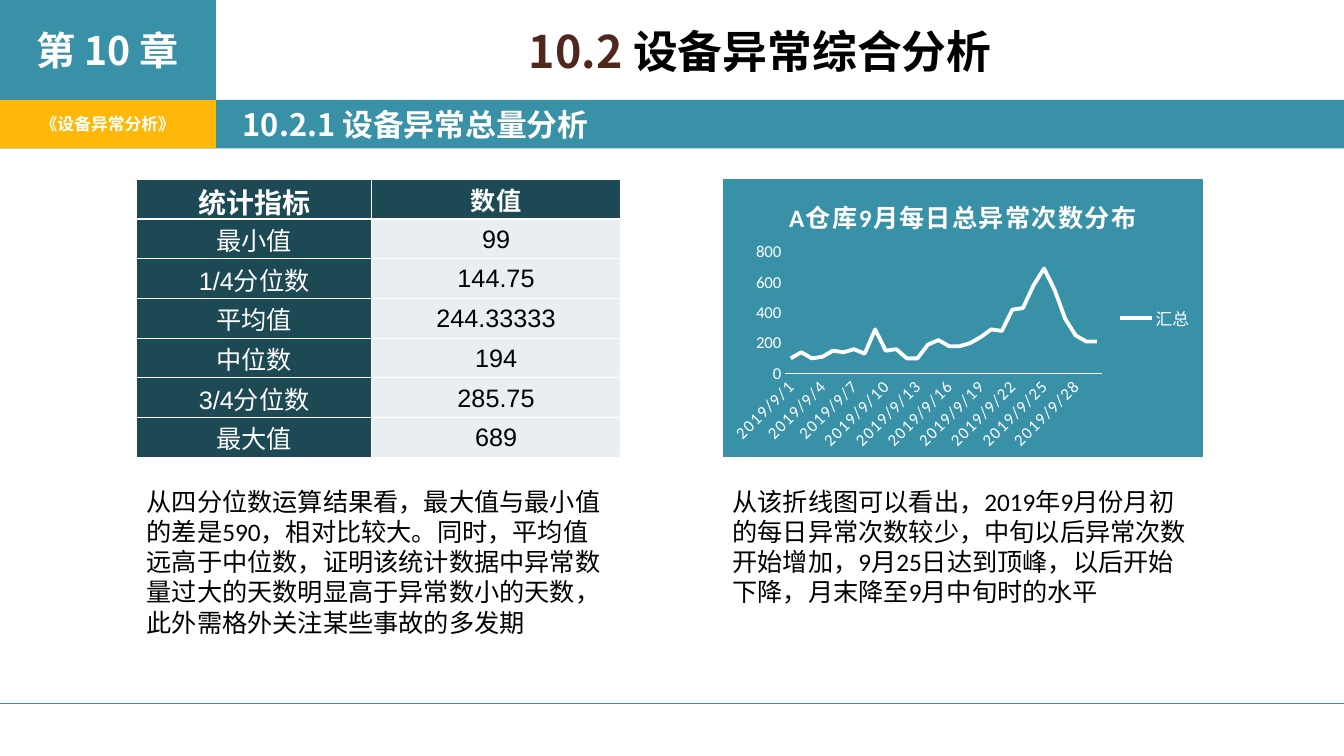
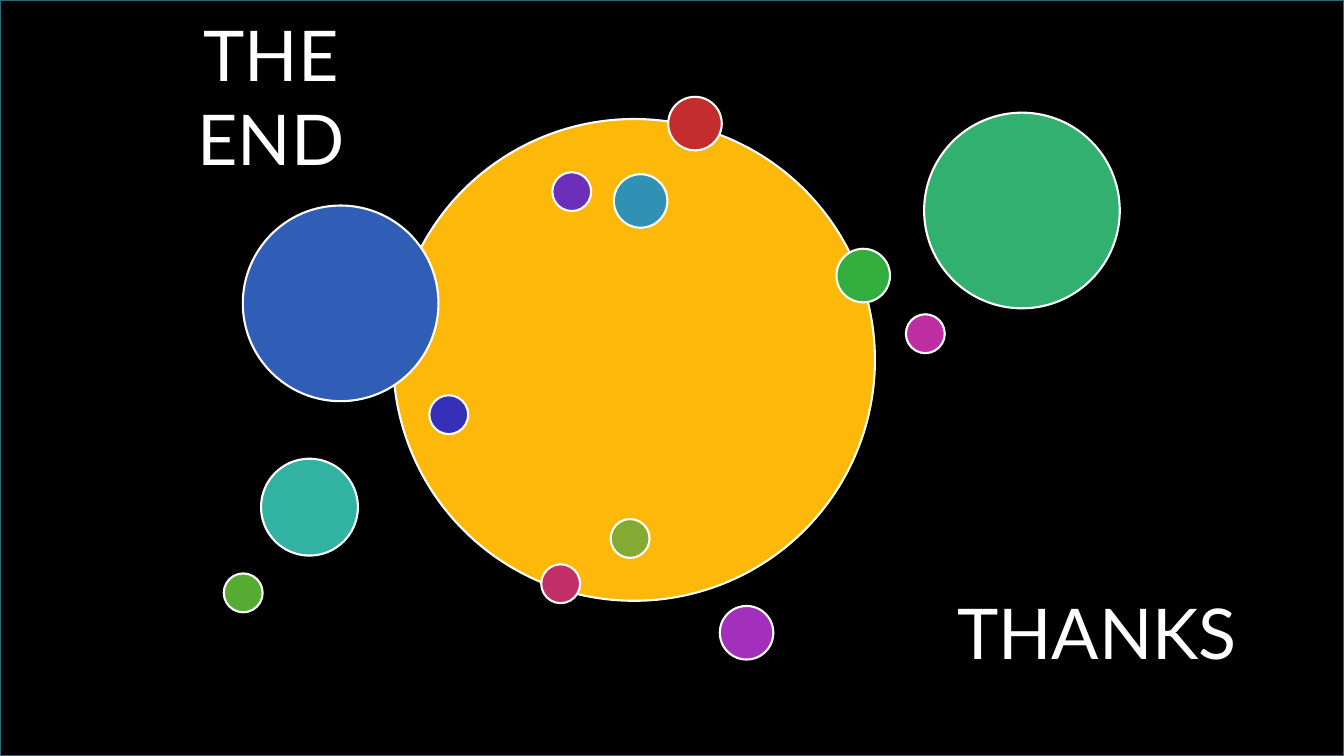
"""Build the equipment anomaly analysis slide and the closing slide."""

from dataclasses import dataclass
from typing import Optional

from lxml.etree import SubElement
from pptx import Presentation
from pptx.chart.data import CategoryChartData
from pptx.dml.color import RGBColor
from pptx.enum.chart import XL_CHART_TYPE as ChartType
from pptx.enum.chart import XL_LEGEND_POSITION as LegendPosition
from pptx.enum.chart import XL_TICK_MARK as TickMark
from pptx.enum.shapes import MSO_CONNECTOR as Connector
from pptx.enum.shapes import MSO_SHAPE as ShapeKind
from pptx.enum.text import MSO_ANCHOR as Anchor
from pptx.enum.text import PP_ALIGN as Align
from pptx.oxml import parse_xml
from pptx.oxml.ns import nsdecls, qn
from pptx.util import Cm, Pt

COLORS = {
    "teal": "3891A7",
    "amber": "FEB80A",
    "brown": "4F271C",
    "navy": "1C4954",
    "pale": "E8EEF1",
    "edge": "296B7C",
    "white": "FFFFFF",
    "black": "000000",
    "red": "C32D2E",
    "rose": "C12E68",
    "magenta": "BF2EA0",
    "purple": "A42FBD",
    "violet": "6C2FBA",
    "indigo": "3630B8",
    "blue": "305EB6",
    "cyan": "3191B4",
    "turquoise": "31B2A2",
    "emerald": "32B06F",
    "green": "32AE3E",
    "leaf": "56AC33",
    "olive": "84AA33",
}
CJK_FONT = "Noto Sans CJK SC"
WIDTH, HEIGHT = 33.87, 19.05
SIDE_WIDTH, HEAD_HEIGHT, BAND_HEIGHT = 5.44, 2.52, 1.22
LEFT_COLUMN, RIGHT_COLUMN, CONTENT_TOP, NOTE_TOP = 3.45, 18.21, 4.52, 12.12
COLUMN_WIDTH, ROW_HEIGHT = 12.19, 1.0


@dataclass(frozen=True)
class Box:
    left: float
    top: float
    width: float
    height: float

    def lengths(self) -> tuple:
        return Cm(self.left), Cm(self.top), Cm(self.width), Cm(self.height)


@dataclass(frozen=True)
class Style:
    size: float
    font: str
    color: str = "black"
    bold: bool = False
    align: Optional[Align] = None
    spacing: int = 0


@dataclass(frozen=True)
class Circle:
    left: float
    top: float
    diameter: float
    color: str


@dataclass(frozen=True)
class Note:
    left: float
    height: float
    text: str


CHAPTER = Style(28, CJK_FONT, "white", True, Align.CENTER)
BOOK = Style(12, CJK_FONT, "white", True, Align.CENTER)
TITLE = Style(32, CJK_FONT, "black", True, Align.CENTER)
SECTION = Style(22, CJK_FONT, "white", True, Align.LEFT)
BODY = Style(18, "Calibri")
CHART_TITLE = Style(18, "Calibri", "white", True, spacing=100)
CLOSING = Style(50, "Lato", "white")

STATISTICS = [
    ("统计指标", "数值"),
    ("最小值", "99"),
    ("1/4分位数", "144.75"),
    ("平均值", "244.33333"),
    ("中位数", "194"),
    ("3/4分位数", "285.75"),
    ("最大值", "689"),
]
DAILY_TOTALS = [
    100, 140, 100, 110, 150, 140, 160, 130, 290, 150,
    160, 100, 100, 190, 220, 180, 180, 200, 240, 290,
    280, 420, 430, 580, 690, 550, 360, 250, 210, 210,
]
NOTES = [
    Note(LEFT_COLUMN, 4.11, "从四分位数运算结果看，最大值与最小值的差是590，相对比较大。同时，平均值远高于中位数，"
         "证明该统计数据中异常数量过大的天数明显高于异常数小的天数，此外需格外关注某些事故的多发期"),
    Note(RIGHT_COLUMN, 3.33, "从该折线图可以看出，2019年9月份月初的每日异常次数较少，中旬以后异常次数开始增加，"
         "9月25日达到顶峰，以后开始下降，月末降至9月中旬时的水平"),
]
TINY, SMALL, MEDIUM, LARGE, HUGE = 0.98, 1.35, 2.44, 4.93, 12.14
CIRCLES = [
    Circle(9.91, 3.0, HUGE, "amber"),
    Circle(16.84, 2.44, SMALL, "red"),
    Circle(13.64, 14.22, TINY, "rose"),
    Circle(22.83, 7.92, TINY, "magenta"),
    Circle(18.14, 15.27, SMALL, "purple"),
    Circle(13.92, 4.34, TINY, "violet"),
    Circle(10.82, 9.96, TINY, "indigo"),
    Circle(6.12, 5.18, LARGE, "blue"),
    Circle(15.47, 4.39, SMALL, "cyan"),
    Circle(6.58, 11.56, MEDIUM, "turquoise"),
    Circle(23.29, 2.84, LARGE, "emerald"),
    Circle(21.08, 6.27, SMALL, "green"),
    Circle(5.64, 14.45, TINY, "leaf"),
    Circle(15.39, 13.08, TINY, "olive"),
]


def rgb(name: str) -> RGBColor:
    return RGBColor.from_string(COLORS[name])


def paint(fill, color: str) -> None:
    fill.solid()
    fill.fore_color.rgb = rgb(color)


def style_font(font, style: Style) -> None:
    font.size, font.name, font.bold = Pt(style.size), style.font, style.bold
    font.color.rgb = rgb(style.color)


def style_paragraph(paragraph, style: Style) -> None:
    paragraph.alignment = style.align
    style_font(paragraph.font, style)
    properties = paragraph.font._element
    if style.font == CJK_FONT:
        SubElement(properties, qn("a:ea")).set("typeface", CJK_FONT)
    if style.spacing:
        properties.set("spc", str(style.spacing))


def write(frame, text: str, style: Style, anchor: Anchor = Anchor.MIDDLE):
    frame.word_wrap = True
    frame.vertical_anchor = anchor
    paragraph = frame.paragraphs[0]
    paragraph.text = text
    style_paragraph(paragraph, style)
    return paragraph


def add_text(slide, box: Box, text: str, style: Style, anchor: Anchor = Anchor.TOP):
    frame = slide.shapes.add_textbox(*box.lengths()).text_frame
    return frame, write(frame, text, style, anchor)


def add_figure(shapes, kind: ShapeKind, box: Box, color: str, outline: Optional[str] = None):
    shape = shapes.add_shape(kind, *box.lengths())
    shape.shadow.inherit = False
    paint(shape.fill, color)
    if outline:
        shape.line.color.rgb = rgb(outline)
        shape.line.width = Pt(1.5)
    else:
        shape.line.fill.background()
    return shape


def add_chapter_frame(slide, section: str) -> None:
    shapes, rectangle = slide.shapes, ShapeKind.RECTANGLE
    band = add_figure(shapes, rectangle, Box(0, HEAD_HEIGHT, WIDTH, BAND_HEIGHT), "teal")
    band.text_frame.margin_left = Cm(SIDE_WIDTH + 0.68)
    write(band.text_frame, section, SECTION)
    book = add_figure(shapes, rectangle, Box(0, HEAD_HEIGHT, SIDE_WIDTH, BAND_HEIGHT), "amber")
    write(book.text_frame, "《设备异常分析》", BOOK)
    chapter = add_figure(shapes, rectangle, Box(0, 0, SIDE_WIDTH, HEAD_HEIGHT), "teal")
    write(chapter.text_frame, "第 10 章", CHAPTER)
    footer = shapes.add_connector(Connector.STRAIGHT, 0, Cm(17.73), Cm(WIDTH), Cm(17.73))
    footer.line.color.rgb = rgb("teal")
    footer.line.width = Pt(0.79)
    SubElement(footer._element.spPr, qn("a:effectLst"))


def add_cell_borders(cell) -> None:
    properties = cell._tc.get_or_add_tcPr()
    for side in ("lnL", "lnR", "lnT", "lnB"):
        line = SubElement(properties, qn(f"a:{side}"), w=str(Pt(1)))
        fill = SubElement(line, qn("a:solidFill"))
        SubElement(fill, qn("a:srgbClr"), val=COLORS["white"])


def add_statistics_table(slide) -> None:
    box = Box(LEFT_COLUMN, CONTENT_TOP, COLUMN_WIDTH, ROW_HEIGHT * len(STATISTICS))
    table = slide.shapes.add_table(len(STATISTICS), 2, *box.lengths()).table
    table.first_row = table.horz_banding = False
    for column, width in zip(table.columns, (5.91, 6.28)):
        column.width = Cm(width)
    for row_index, values in enumerate(STATISTICS):
        table.rows[row_index].height = Cm(ROW_HEIGHT)
        for column_index, value in enumerate(values):
            cell = table.cell(row_index, column_index)
            header = row_index == 0
            dark = header or column_index == 0
            cell.margin_left = cell.margin_right = cell.margin_top = Cm(0.03)
            cell.margin_bottom = 0
            cell.vertical_anchor = Anchor.MIDDLE
            add_cell_borders(cell)
            paint(cell.fill, "navy" if dark else "pale")
            paragraph = cell.text_frame.paragraphs[0]
            paragraph.text = value
            size = 20 if header and column_index == 0 else 18
            color = "white" if dark else "black"
            style_paragraph(paragraph, Style(size, "Arial", color, header, Align.CENTER))


def add_daily_chart(slide) -> None:
    data = CategoryChartData()
    data.categories = [f"2019/9/{day}" for day in range(1, len(DAILY_TOTALS) + 1)]
    data.add_series("汇总", DAILY_TOTALS)
    box = Box(RIGHT_COLUMN, CONTENT_TOP, 12.12, 7)
    chart = slide.shapes.add_chart(ChartType.LINE, *box.lengths(), data).chart
    label = Style(12, "Calibri", "white")
    style_font(chart.font, label)
    chart.element.find(qn("c:txPr")).addprevious(parse_xml(
        f'<c:spPr {nsdecls("c", "a")}><a:solidFill><a:srgbClr val="{COLORS["teal"]}"/></a:solidFill>'
        f'<a:ln w="{Pt(0.75)}"><a:solidFill><a:srgbClr val="{COLORS["teal"]}"/></a:solidFill></a:ln></c:spPr>'))
    write(chart.chart_title.text_frame, "A仓库9月每日总异常次数分布", CHART_TITLE)
    chart.has_legend = True
    chart.legend.position = LegendPosition.RIGHT
    chart.legend.include_in_layout = False
    style_font(chart.legend.font, label)

    for axis in (chart.category_axis, chart.value_axis):
        axis.has_major_gridlines = False
        axis.major_tick_mark = axis.minor_tick_mark = TickMark.NONE
        style_font(axis.tick_labels.font, label)
    chart.value_axis.minimum_scale, chart.value_axis.maximum_scale = 0, 800
    chart.value_axis.major_unit = 200
    chart.value_axis.format.line.fill.background()
    category_axis = chart.category_axis
    category_axis.format.line.color.rgb = rgb("white")
    category_axis.format.line.width = Pt(1)
    category_axis.tick_labels.font._element.set("spc", "100")
    category_axis._element.find(qn("c:txPr")).find(qn("a:bodyPr")).set("rot", "-2700000")
    skip = parse_xml(f'<c:tickLblSkip {nsdecls("c")} val="3"/>')
    category_axis._element.find(qn("c:noMultiLvlLbl")).addprevious(skip)

    plot = chart.plots[0]
    plot.vary_by_categories = False
    series = plot.series[0]
    series.smooth = False
    series.format.line.color.rgb = rgb("white")
    series.format.line.width = Pt(2.75)
    plot_area = chart.element.chart.plotArea
    for previous in plot_area.findall(qn("c:layout")):
        plot_area.remove(previous)
    layout = SubElement(plot_area, qn("c:layout"))
    plot_area.insert(0, layout)
    manual = SubElement(layout, qn("c:manualLayout"))
    for tag, value in (("layoutTarget", "inner"), ("xMode", "edge"), ("yMode", "edge"),
                       ("x", "0.13"), ("y", "0.26"), ("w", "0.66"), ("h", "0.44")):
        SubElement(manual, qn(f"c:{tag}"), val=value)


def build_analysis_slide(slide) -> None:
    add_chapter_frame(slide, "10.2.1 设备异常总量分析")
    _, title = add_text(slide, Box(5.87, 0.48, 26.59, 2.03), "10.2 ", TITLE)
    title.runs[0].font.color.rgb = rgb("brown")
    title.add_run().text = "设备异常综合分析"
    add_statistics_table(slide)
    add_daily_chart(slide)
    for note in NOTES:
        add_text(slide, Box(note.left, NOTE_TOP, COLUMN_WIDTH, note.height), note.text, BODY)


def build_closing_slide(slide) -> None:
    add_figure(slide.shapes, ShapeKind.RECTANGLE, Box(0, 0, WIDTH, HEIGHT), "black", "edge")
    _, ending = add_text(slide, Box(2.83, 0.91, 8, 3), "THE\vEND", CLOSING, Anchor.MIDDLE)
    ending.alignment = Align.CENTER
    frame, _ = add_text(slide, Box(23.52, 14.83, 8, 2.16), "THANKS", CLOSING, Anchor.MIDDLE)
    frame.margin_left, frame.margin_right = Cm(0.6), 0
    group = slide.shapes.add_group_shape()
    for circle in CIRCLES:
        box = Box(circle.left, circle.top, circle.diameter, circle.diameter)
        add_figure(group.shapes, ShapeKind.OVAL, box, circle.color, "white")


def main() -> None:
    presentation = Presentation()
    presentation.slide_width, presentation.slide_height = Cm(WIDTH), Cm(HEIGHT)
    for build in (build_analysis_slide, build_closing_slide):
        build(presentation.slides.add_slide(presentation.slide_layouts[6]))
    presentation.save("out.pptx")


if __name__ == "__main__":
    main()
